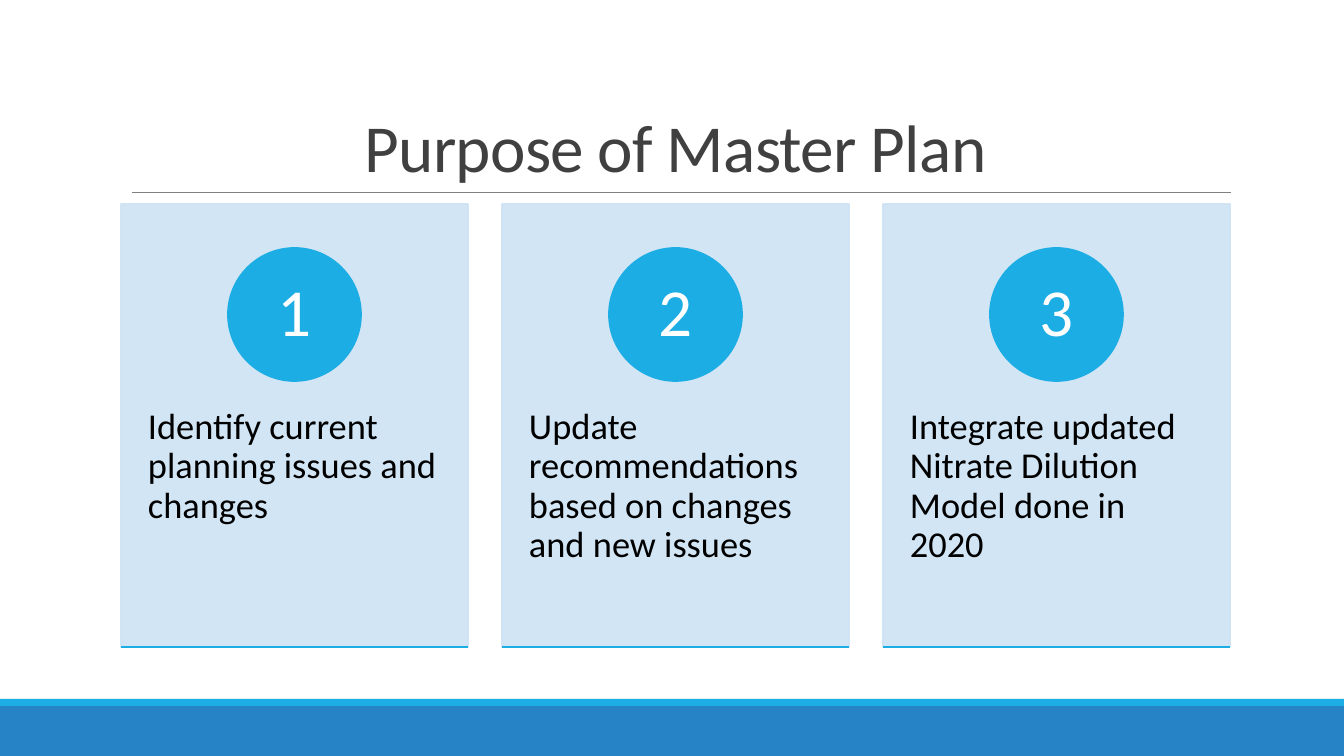
from lxml import etree
from pptx import Presentation
from pptx.dml.color import RGBColor
from pptx.enum.shapes import MSO_CONNECTOR as Connector, MSO_SHAPE as Shape
from pptx.enum.text import MSO_ANCHOR as Anchor, PP_ALIGN as Align
from pptx.oxml.ns import qn
from pptx.util import Pt

TITLE = "Purpose of Master Plan"
PURPOSES = [
    "Identify current planning issues and changes",
    "Update recommendations based on changes and new issues",
    "Integrate updated Nitrate Dilution Model done in 2020",
]

FONT = "Calibri"
BRIGHT, DEEP, PALE = "1CADE4", "2683C6", "CDE3F5"
DARK, GREY, BLACK, WHITE = "404040", "808080", "000000", "FFFFFF"

PAGE_WIDTH, PAGE_HEIGHT = 1344, 756
EMU_PER_PX = 12192000 / PAGE_WIDTH

TITLE_BOX = (121, 31, 1109, 160)
RULE = (132, 192, 1231, 192)
FOOTER_BARS = [((0, 706, PAGE_WIDTH, 50), DEEP), ((0, 699, PAGE_WIDTH, 7), BRIGHT)]
CARD_LEFT, CARD_TOP, CARD_WIDTH, CARD_HEIGHT, CARD_STEP = 121, 204, 347, 443, 381
CIRCLE_TOP, CIRCLE_SIZE = 248, 133
BODY_TOP, BODY_HEIGHT = 372, 266

TITLE_FRAME = dict(vertical_anchor=Anchor.BOTTOM, word_wrap=True)
TITLE_PARA = dict(alignment=Align.CENTER, line_spacing=0.85)
BODY_INSETS = (27, 36, 27, 36)
BODY_FRAME = dict(vertical_anchor=Anchor.TOP, word_wrap=True)
BODY_PARA = dict(alignment=Align.LEFT, line_spacing=0.9)
NUMBER_INSETS = (10, 1, 10, 1)
NUMBER_FRAME = dict(vertical_anchor=Anchor.MIDDLE, word_wrap=True)
NUMBER_PARA = dict(alignment=Align.CENTER, line_spacing=0.9)


def px(*lengths):
    return [round(length * EMU_PER_PX) for length in lengths]


def rgb(color):
    return RGBColor.from_string(color)


def set_values(target, values):
    for name, value in values.items():
        setattr(target, name, value)


def set_opacity(fill_parent, percent):
    for color in fill_parent.iter(qn("a:srgbClr")):
        etree.SubElement(color, qn("a:alpha"), val=str(percent * 1000))


def add_filled(page, kind, box, color, outline=None):
    shape = page.shapes.add_shape(kind, *px(*box))
    shape.shadow.inherit = False
    shape.fill.solid()
    shape.fill.fore_color.rgb = rgb(color)
    if outline:
        shape.line.color.rgb = rgb(color)
        shape.line.width = Pt(outline)
    else:
        shape.line.fill.background()
    return shape


def add_line(page, ends, color, width):
    line = page.shapes.add_connector(Connector.STRAIGHT, *px(*ends))
    line.line.color.rgb = rgb(color)
    line.line.width = Pt(width)
    etree.SubElement(line._element.spPr, qn("a:effectLst"))


def write(shape, text, size, color, frame_values, para_values, insets=None):
    frame = shape.text_frame
    set_values(frame, frame_values)
    if insets:
        sides = ("margin_left", "margin_top", "margin_right", "margin_bottom")
        set_values(frame, dict(zip(sides, px(*insets))))
    para = frame.paragraphs[0]
    set_values(para, para_values)
    span = para.add_run()
    span.text = text
    set_values(span.font, dict(name=FONT, size=Pt(size)))
    span.font.color.rgb = rgb(color)
    return span


def add_card(page, index, purpose):
    left = CARD_LEFT + index * CARD_STEP
    bottom = CARD_TOP + CARD_HEIGHT
    panel_box = (left, CARD_TOP, CARD_WIDTH, CARD_HEIGHT)
    panel = add_filled(page, Shape.RECTANGLE, panel_box, PALE, 1.25)
    set_opacity(panel._element.spPr, 90)

    body = page.shapes.add_textbox(*px(left, BODY_TOP, CARD_WIDTH, BODY_HEIGHT))
    write(body, purpose, 26, BLACK, BODY_FRAME, BODY_PARA, BODY_INSETS)

    circle_left = left + (CARD_WIDTH - CIRCLE_SIZE) / 2
    circle_box = (circle_left, CIRCLE_TOP, CIRCLE_SIZE, CIRCLE_SIZE)
    circle = add_filled(page, Shape.OVAL, circle_box, BRIGHT, 1.25)
    write(circle, str(index + 1), 48, WHITE, NUMBER_FRAME, NUMBER_PARA, NUMBER_INSETS)

    add_line(page, (left, bottom, left + CARD_WIDTH, bottom), BRIGHT, 1.25)


def main():
    deck = Presentation()
    deck.slide_width, deck.slide_height = px(PAGE_WIDTH, PAGE_HEIGHT)
    page = deck.slides.add_slide(deck.slide_layouts[5])

    for box, color in FOOTER_BARS:
        add_filled(page, Shape.RECTANGLE, box, color)
    add_line(page, RULE, GREY, 0.5)

    title = page.shapes.title
    set_values(title, dict(zip(("left", "top", "width", "height"), px(*TITLE_BOX))))
    span = write(title, TITLE, 48, DARK, TITLE_FRAME, TITLE_PARA)
    span.font._element.set("spc", "-50")

    for index, purpose in enumerate(PURPOSES):
        add_card(page, index, purpose)

    deck.save("out.pptx")


if __name__ == "__main__":
    main()
